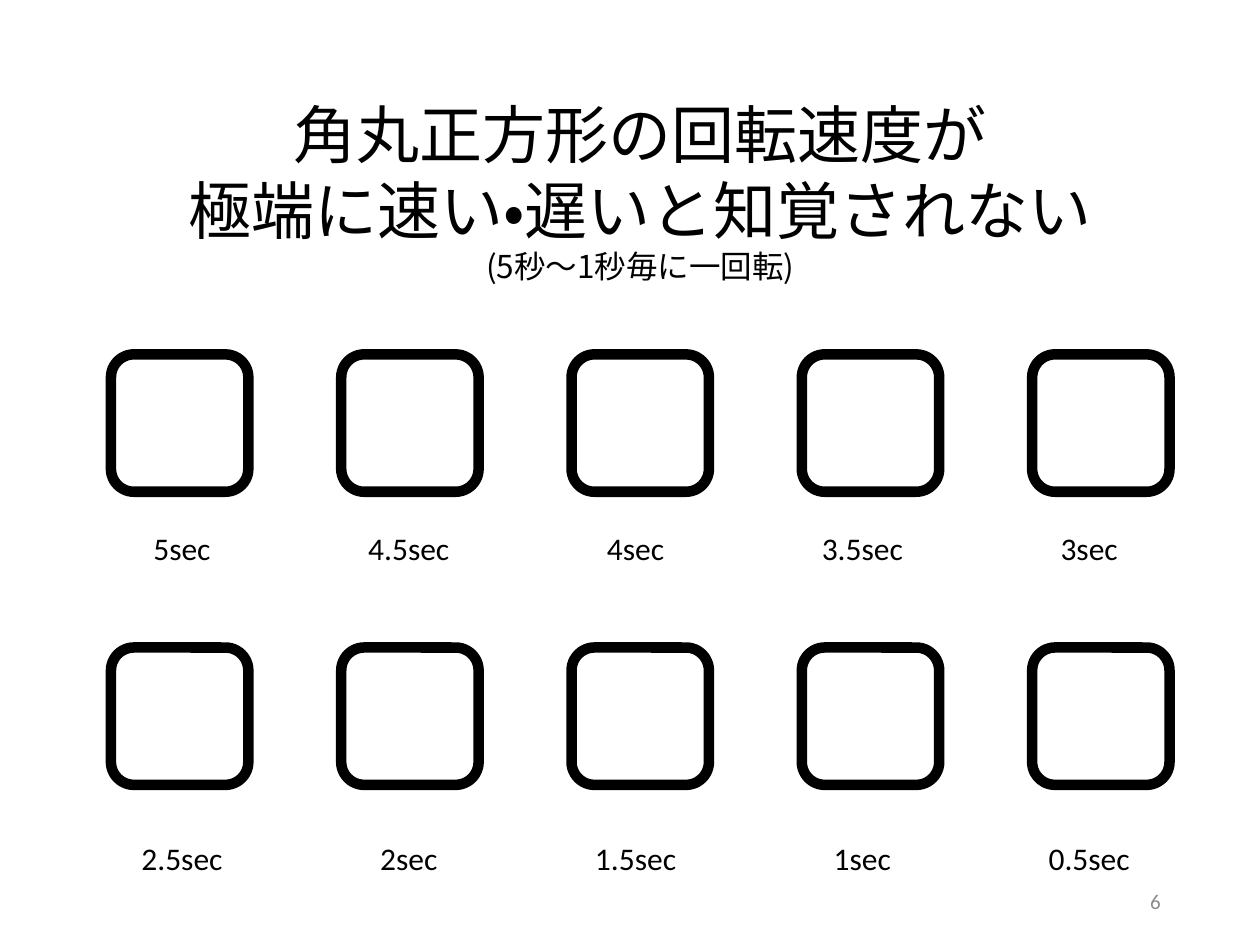
from collections import namedtuple
from dataclasses import dataclass

from pptx import Presentation
from pptx.dml.color import RGBColor
from pptx.enum import lang, shapes, text
from pptx.util import Pt

Box = namedtuple("Box", "left top width height")


@dataclass(frozen=True)
class Theme:
    ink: RGBColor = RGBColor(0, 0, 0)
    muted: RGBColor = RGBColor(0x8C, 0x8C, 0x8C)
    latin: str = "Calibri"
    japanese: str = "Noto Sans CJK JP"
    title_size: int = 36
    body_size: int = 18
    number_size: int = 12
    outline: int = 6


THEME = Theme()
TITLE_LINES = [
    ("角丸正方形の回転速度が", THEME.title_size, THEME.latin),
    ("極端に速い・遅いと知覚されない", THEME.title_size, THEME.latin),
    ("(5秒～1秒毎に一回転)", THEME.body_size, THEME.japanese),
]
SQUARE_SIDE = 78.5
SQUARE_PITCH = 131.6
LABEL_WIDTH = 100
LABEL_PITCH = 129.6
LABEL_HEIGHT = 29


def points(box):
    return [Pt(length) for length in box]


def style(para, size, font, color, align):
    para.font.size = Pt(size)
    para.font.name = font
    para.font.color.rgb = color
    para.alignment = align


def add_title(page, box):
    title = page.shapes.title
    title.left, title.top, title.width, title.height = points(box)
    frame = title.text_frame
    frame.vertical_anchor = text.MSO_ANCHOR.TOP
    frame.auto_size = text.MSO_AUTO_SIZE.SHAPE_TO_FIT_TEXT
    frame.text = "\n".join(line for line, _, _ in TITLE_LINES)
    for para, (_, size, font) in zip(frame.paragraphs, TITLE_LINES):
        style(para, size, font, THEME.ink, text.PP_ALIGN.CENTER)
        para.runs[0].font.language_id = lang.MSO_LANGUAGE_ID.JAPANESE


def add_text(page, box, wording, size, color, align, anchor):
    frame = page.shapes.add_textbox(*points(box)).text_frame
    frame.word_wrap = True
    frame.vertical_anchor = anchor
    frame.text = wording
    style(frame.paragraphs[0], size, THEME.latin, color, align)


def add_square(page, box):
    square = page.shapes.add_shape(
        shapes.MSO_SHAPE.ROUNDED_RECTANGLE, *points(box))
    square.shadow.inherit = False
    square.fill.background()
    square.line.color.rgb = THEME.ink
    square.line.width = Pt(THEME.outline)


def add_speed_row(page, box, label_top, speeds):
    """Place one row of squares in the box, with the labels below them."""
    label_left = box.left - 9.4
    for column, speed in enumerate(speeds):
        add_square(page, Box(box.left + column * SQUARE_PITCH, box.top,
                             SQUARE_SIDE, box.height))
        add_text(page, Box(label_left + column * LABEL_PITCH, label_top,
                           LABEL_WIDTH, LABEL_HEIGHT),
                 f"{speed}sec", THEME.body_size, THEME.ink,
                 text.PP_ALIGN.CENTER, text.MSO_ANCHOR.TOP)


def add_page_number(page, box, number):
    add_text(page, box, str(number), THEME.number_size, THEME.muted,
             text.PP_ALIGN.RIGHT, text.MSO_ANCHOR.MIDDLE)


def main():
    deck = Presentation()
    deck.slide_width, deck.slide_height = Pt(720), Pt(540)
    page = deck.slides.add_slide(deck.slide_layouts.get_by_name("Title Only"))
    add_title(page, Box(63.4, 51, 604.8, 119))
    add_speed_row(page, Box(63.4, 202.5, 604.8, SQUARE_SIDE), 299,
                  ["5", "4.5", "4", "3.5", "3"])
    add_speed_row(page, Box(63.4, 370, 604.8, SQUARE_SIDE), 476,
                  ["2.5", "2", "1.5", "1", "0.5"])
    add_page_number(page, Box(508.3, 500.5, 162, 28.8), 6)
    deck.save("out.pptx")


if __name__ == "__main__":
    main()
